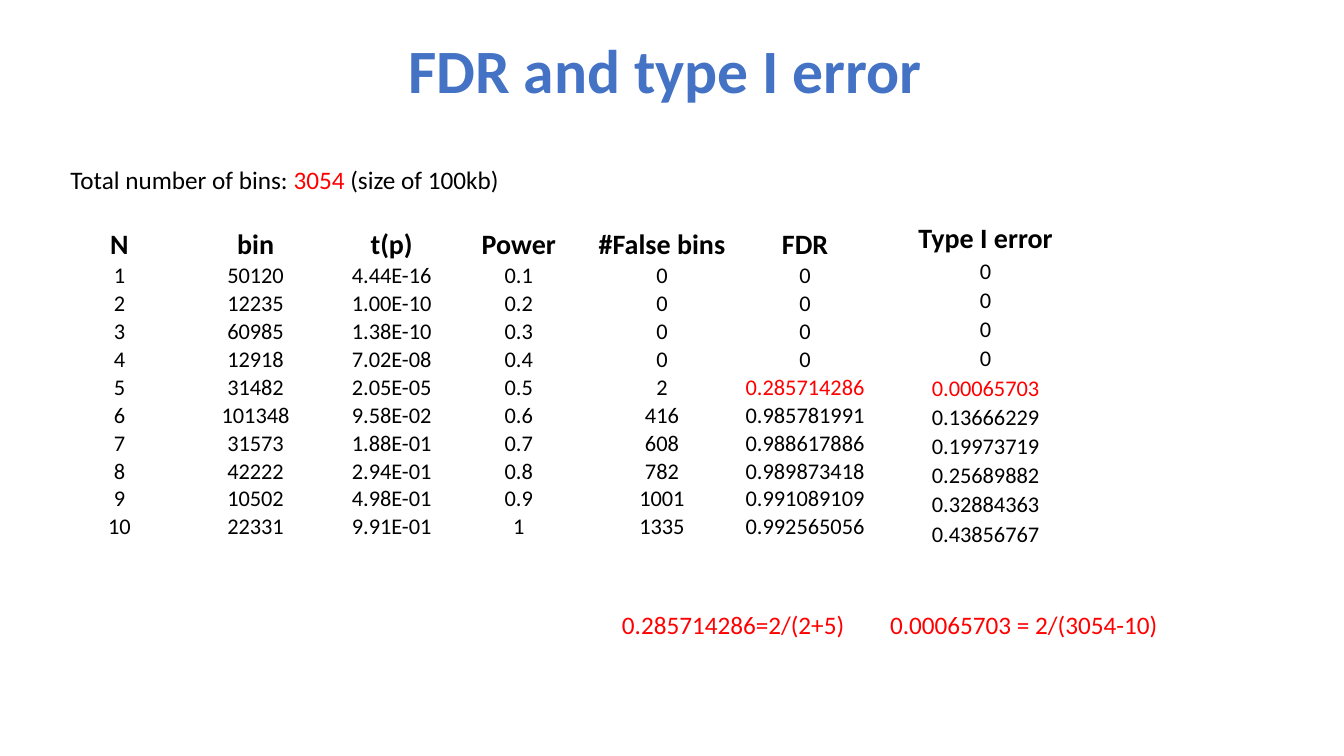
from lxml.etree import SubElement
from pptx import Presentation
from pptx.dml.color import RGBColor
from pptx.enum.text import MSO_ANCHOR as Anchor, MSO_AUTO_SIZE as AutoSize, PP_ALIGN as Align
from pptx.oxml.ns import qn
from pptx.util import Pt

EMU_PER_PX = 9144
FONT = "Calibri"
BLACK = RGBColor(0x00, 0x00, 0x00)
RED = RGBColor(0xFF, 0x00, 0x00)
BLUE = RGBColor(0x44, 0x72, 0xC4)
WHITE = RGBColor(0xFF, 0xFF, 0xFF)
PLAIN_TABLE_STYLE = "{2D5ABB26-0587-4C30-8999-92F81FD0307C}"

BIN_ROWS = [
    ("N", "bin", "t(p)"),
    ("1", "50120", "4.44E-16"),
    ("2", "12235", "1.00E-10"),
    ("3", "60985", "1.38E-10"),
    ("4", "12918", "7.02E-08"),
    ("5", "31482", "2.05E-05"),
    ("6", "101348", "9.58E-02"),
    ("7", "31573", "1.88E-01"),
    ("8", "42222", "2.94E-01"),
    ("9", "10502", "4.98E-01"),
    ("10", "22331", "9.91E-01"),
]
POWER = ["Power", "0.1", "0.2", "0.3", "0.4", "0.5", "0.6", "0.7", "0.8", "0.9", "1"]
FALSE_BINS = ["#False bins", "0", "0", "0", "0", "2", "416", "608", "782", "1001", "1335"]
FDR = ["FDR", "0", "0", "0", "0", "0.285714286", "0.985781991", "0.988617886",
       "0.989873418", "0.991089109", "0.992565056"]
TYPE_I_ERROR = ["Type I error", "0", "0", "0", "0", "0.00065703", "0.13666229",
                "0.19973719", "0.25689882", "0.32884363", "0.43856767"]
HIGHLIGHTS = {"0.285714286", "0.00065703"}


def px(length):
    return length * EMU_PER_PX


class SlideBuilder:
    """Adds consistently styled titles, notes and tables to one slide."""

    def __init__(self, presentation):
        self.slide = presentation.slides.add_slide(presentation.slide_layouts[5])

    def style(self, paragraph, size, color=None, bold=False):
        font = paragraph.font
        font.name, font.size, font.bold = FONT, Pt(size), bold
        if color is not None:
            font.color.rgb = color

    def title(self, text, left, top, width, height):
        shape = self.slide.shapes.title
        shape.left, shape.top, shape.width, shape.height = map(px, (left, top, width, height))
        shape.text_frame.text = text
        shape.text_frame.vertical_anchor = Anchor.MIDDLE
        paragraph = shape.text_frame.paragraphs[0]
        paragraph.alignment = Align.CENTER
        paragraph.line_spacing = 0.9
        self.style(paragraph, 44, BLUE, bold=True)

    def text(self, parts, left, top, width, height=40):
        shape = self.slide.shapes.add_textbox(*map(px, (left, top, width, height)))
        frame = shape.text_frame
        frame.word_wrap = True
        frame.auto_size = AutoSize.SHAPE_TO_FIT_TEXT
        paragraph = frame.paragraphs[0]
        self.style(paragraph, 18)
        for content, color in parts:
            run = paragraph.add_run()
            run.text = content
            run.font.color.rgb = color

    def table(self, rows, left, top, column_width, height, row_heights, border=None):
        column_count = len(rows[0])
        shape = self.slide.shapes.add_table(
            len(rows), column_count,
            *map(px, (left, top, column_width * column_count, height)))
        for style_id in shape.element.iter(qn("a:tableStyleId")):
            style_id.text = PLAIN_TABLE_STYLE
        table = shape.table
        table.horz_banding = False
        for column in table.columns:
            column.width = px(column_width)
        for row_index, values in enumerate(rows):
            table.rows[row_index].height = px(row_heights[row_index])
            for column_index, value in enumerate(values):
                self.cell(table.cell(row_index, column_index), value, row_index == 0, border)

    def cell(self, cell, value, is_header, border):
        cell.margin_left = cell.margin_right = cell.margin_top = px(1)
        cell.margin_bottom = 0
        cell.vertical_anchor = Anchor.BOTTOM
        if border is not None:
            self.border(cell, border)
        cell.fill.background()
        cell.text = value
        paragraph = cell.text_frame.paragraphs[0]
        paragraph.alignment = Align.CENTER
        color = RED if value in HIGHLIGHTS else BLACK
        self.style(paragraph, 20 if is_header else 16, color, bold=is_header)

    def border(self, cell, color):
        properties = cell._tc.get_or_add_tcPr()
        for side in ("a:lnL", "a:lnR", "a:lnT", "a:lnB"):
            line = SubElement(properties, qn(side), w=str(Pt(1)))
            fill = SubElement(line, qn("a:solidFill"))
            SubElement(fill, qn("a:srgbClr"), val=str(color))


def main():
    presentation = Presentation()
    presentation.slide_width, presentation.slide_height = px(1333), px(750)
    builder = SlideBuilder(presentation)

    builder.title("FDR and type I error", 85, 0, 1150, 145)
    builder.text([("Total number of bins: ", BLACK), ("3054", RED), (" (size of 100kb)", BLACK)],
                 60, 158, 919)

    compact_heights = [21] * len(BIN_ROWS)
    builder.table(BIN_ROWS, 51, 225, 135, 315, compact_heights)
    for index, values in enumerate((POWER, FALSE_BINS, FDR)):
        builder.table([(value,) for value in values], 447 + 142 * index, 225, 135, 315,
                      compact_heights)
    builder.table([(value,) for value in TYPE_I_ERROR], 892, 188, 171, 352,
                  [66] + [29] * 10, WHITE)

    builder.text([("0.285714286=2/(2+5)", RED)], 607, 600, 266)
    builder.text([("0.00065703 = 2/(3054-10)", RED)], 873, 600, 373)

    presentation.save("out.pptx")


if __name__ == "__main__":
    main()
